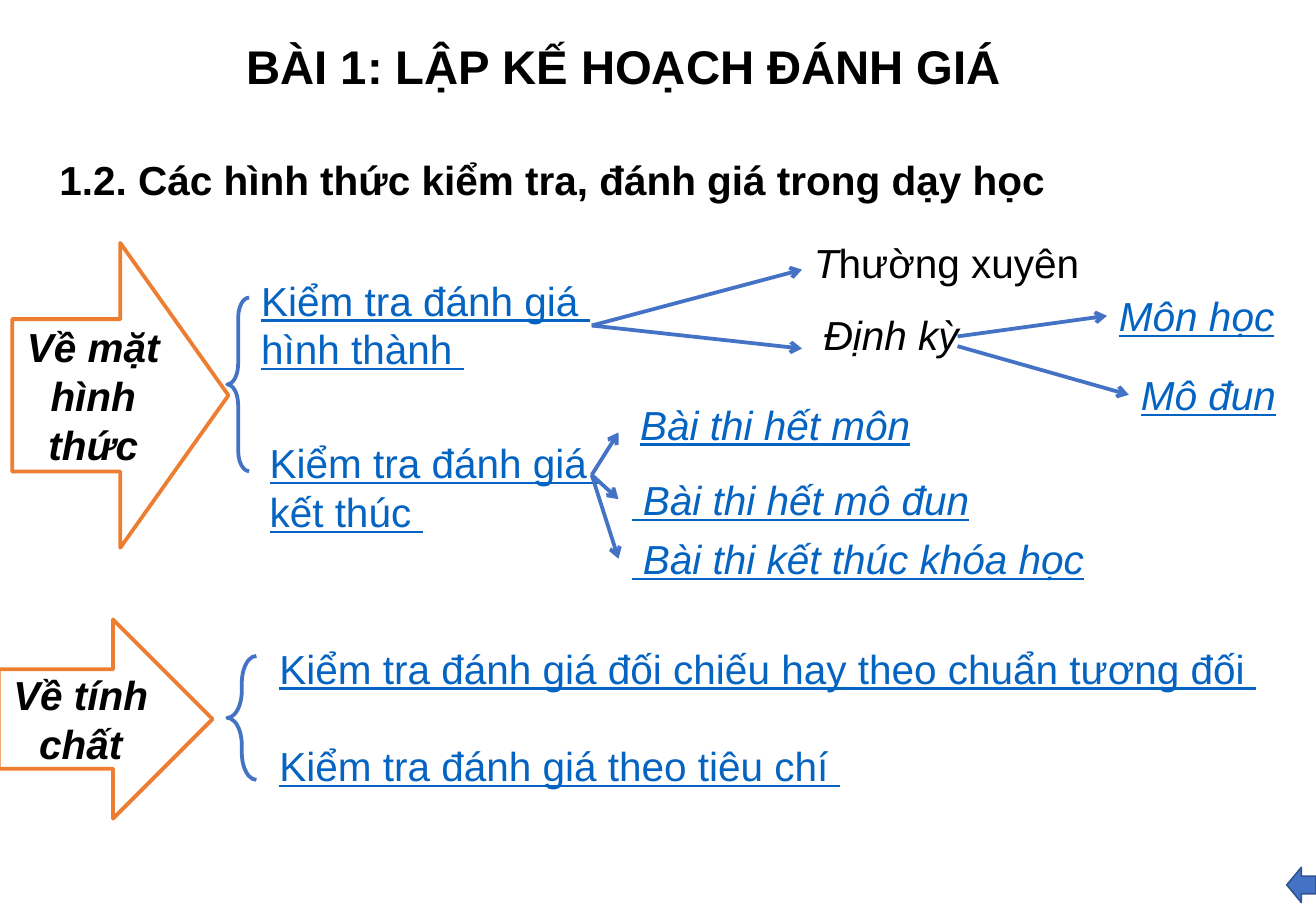
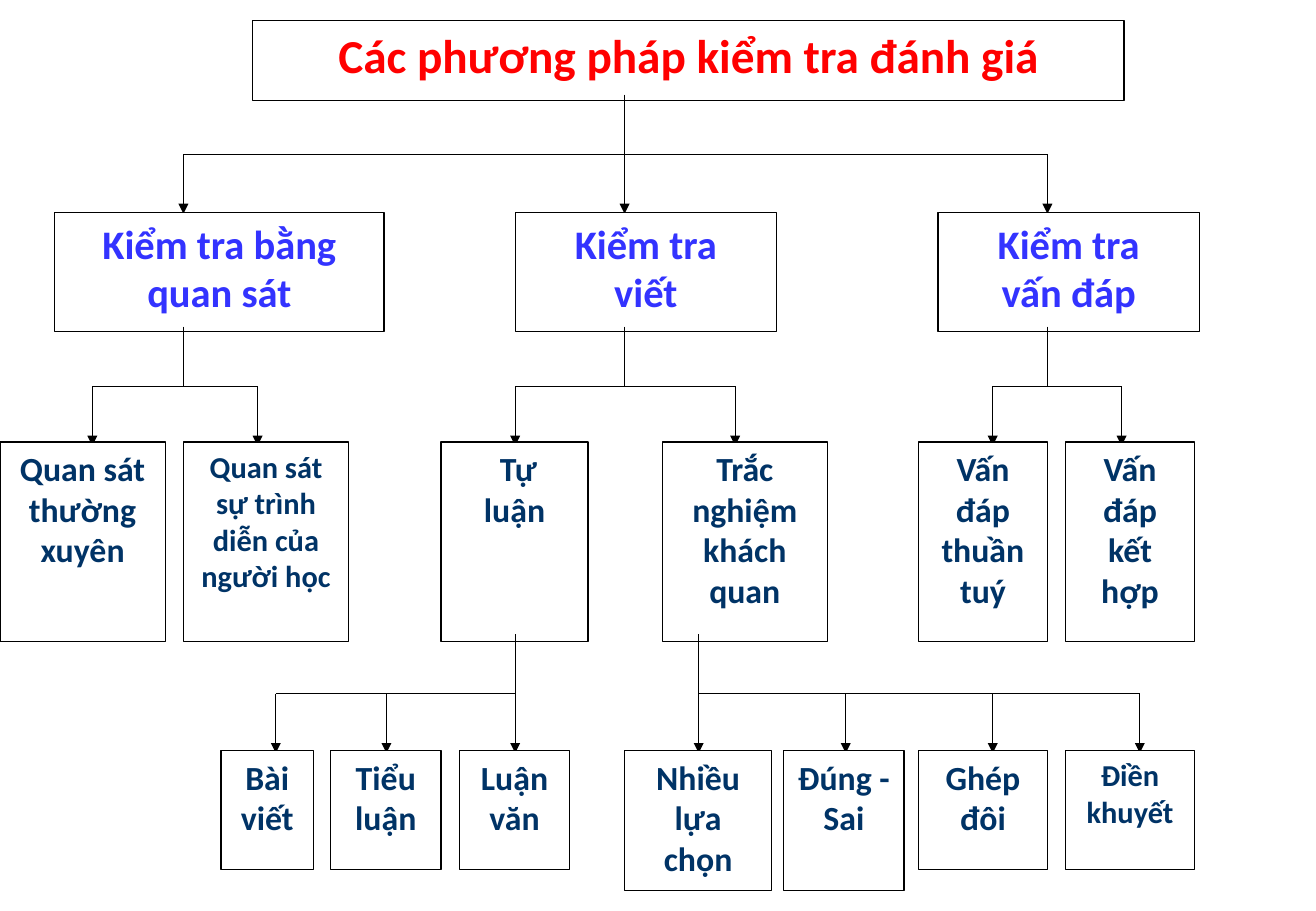
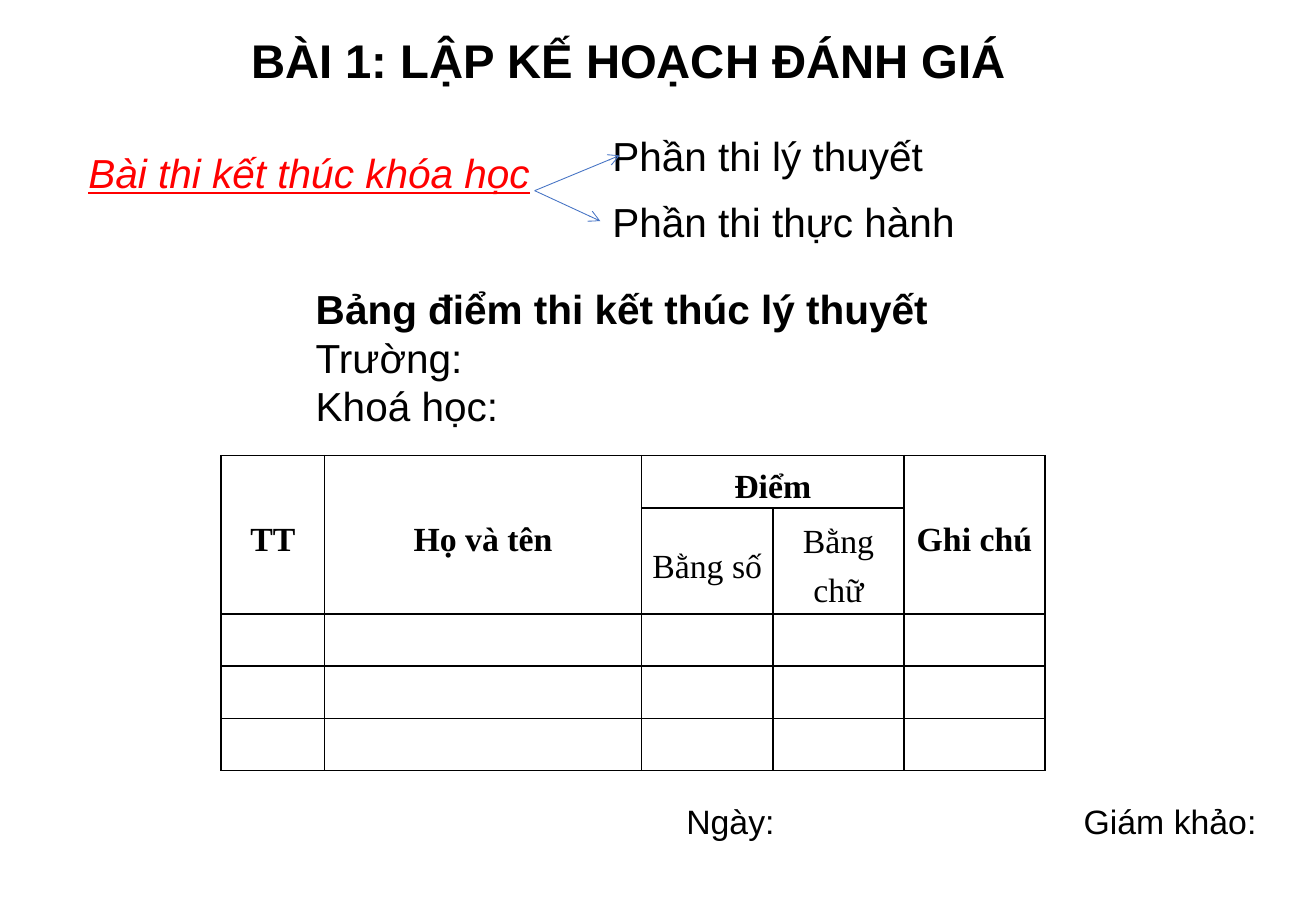
from lxml.etree import SubElement
from pptx import Presentation
from pptx.dml.color import RGBColor
from pptx.enum.shapes import MSO_CONNECTOR, MSO_SHAPE
from pptx.enum.text import MSO_ANCHOR, MSO_AUTO_SIZE, PP_ALIGN
from pptx.oxml.ns import qn
from pptx.util import Inches, Pt

COLORS = {
    "white": "FFFFFF", "black": "000000", "red": "FF0000",
    "orange": "ED7D31", "blue": "4472C4", "edge": "325491",
    "link": "0563C1", "violet": "3333FF", "navy": "003366",
}
TITLE = "BÀI 1: LẬP KẾ HOẠCH ĐÁNH GIÁ"

# Slide 1: text, place, style letters, colour
HEADING = "1.2. Các hình thức kiểm tra, đánh giá trong dạy học"
ASPECTS = [
    ("Về mặt hình thức", (0.1, 2, 1.78, 2.51)),
    ("Về tính chất", (-0.01, 5.1, 1.76, 1.64)),
]
BRACES = [(1.87, 2.45, 0.18, 1.43), (1.87, 5.4, 0.24, 1.02)]
FORMS = [
    ("Kiểm tra đánh giá \nhình thành ", (2.05, 2.22, 3.03, 0.91), "u", "link"),
    ("Kiểm tra đánh giá \nkết thúc ", (2.12, 3.56, 2.93, 0.91), "u", "link"),
    ("Bài thi hết môn", (5.17, 3.24, 2.54, 0.5), "iu", "link"),
    ("Định kỳ", (6.68, 2.5, 1.33, 0.5), "i", "black"),
    ("Môn học", (9.11, 2.35, 1.49, 0.5), "iu", "link"),
    ("Mô đun", (9.29, 3, 1.33, 0.5), "iu", "link"),
    (" Bài thi hết mô đun", (5.1, 3.86, 3.1, 0.5), "iu", "link"),
    (" Bài thi kết thúc khóa học", (5.1, 4.35, 4.06, 0.5), "iu", "link"),
]
REGULAR = [[("T", "i"), ("hường xuyên", "")]]
NATURES = ("Kiểm tra đánh giá đối chiếu hay theo chuẩn tương đối \n"
           "Kiểm tra đánh giá theo tiêu chí ")
FORM_ARROWS = [
    ((4.87, 2.68), (6.6, 2.22)), ((4.87, 2.68), (6.6, 2.87)),
    ((7.88, 2.77), (9.11, 2.6)), ((7.88, 2.85), (9.29, 3.25)),
    ((4.87, 3.91), (5.09, 3.56)), ((4.87, 3.91), (5.09, 4.11)),
    ((4.87, 3.91), (5.09, 4.6)),
]

# Slide 2: each level has boxes (text, left, width, height, size)
# and forks (trunk x, xs of the arrows) that start at fork height
HALF = 0.49
LEVELS = [
    {"top": 0.17, "color": "red", "fork": 0.78,
     "boxes": [("Các phương pháp kiểm tra đánh giá", 2.08, 7.17, 0.66, 28)],
     "forks": [(5.14, (1.51, 5.14, 8.62))]},
    {"top": 1.75, "color": "violet", "fork": 2.69,
     "boxes": [("Kiểm tra bằng quan sát", 0.45, 2.71, 0.98, 24),
               ("Kiểm tra\nviết", 4.24, 2.15, 0.98, 24),
               ("Kiểm tra\nvấn đáp", 7.72, 2.15, 0.98, 24)],
     "forks": [(1.51, (0.76, 2.12)), (5.14, (4.24, 6.05)),
               (8.62, (8.17, 9.23))]},
    {"top": 3.64, "color": "navy", "fork": 5.22,
     "boxes": [("Quan sát thường xuyên", 0, 1.36, 1.64, 20),
               ("Quan sát sự trình diễn của người học", 1.51, 1.36, 1.64, 18),
               (" Tự\nluận", 3.63, 1.21, 1.64, 20),
               ("Trắc nghiệm khách quan", 5.45, 1.36, 1.64, 20),
               ("Vấn đáp\nthuần tuý", 7.56, 1.06, 1.64, 20),
               ("Vấn đáp kết hợp", 8.77, 1.06, 1.64, 20)],
     "forks": [(4.24, (2.27, 3.18, 4.24)), (5.75, (5.75, 6.96, 8.17, 9.38))]},
    {"top": 6.18, "color": "navy", "fork": None,
     "boxes": [("Bài viết", 1.82, 0.76, 0.98, 20),
               ("Tiểu luận", 2.72, 0.91, 0.98, 20),
               ("Luận văn", 3.78, 0.91, 0.98, 20),
               ("Nhiều lựa chọn", 5.14, 1.21, 1.15, 20),
               ("Đúng - Sai", 6.45, 0.99, 1.15, 20),
               ("Ghép đôi", 7.56, 1.06, 0.98, 20),
               ("Điền khuyết", 8.77, 1.06, 0.98, 18)],
     "forks": []},
]

# Slide 3
EXAM = "Bài thi kết thúc khóa học"
PARTS = [("Phần thi lý thuyết", (4.94, 1.03, 2.88, 0.5)),
         ("Phần thi thực hành", (4.94, 1.57, 3.05, 0.5))]
PART_ARROWS = [((4.4, 1.57), (5.1, 1.28)), ((4.4, 1.57), (4.94, 1.82))]
SHEET = [[("Bảng điểm thi kết thúc lý thuyết", "b")],
         [("Trường:", "")], [("Khoá học:", "")]]
COLS = [0.85, 2.61, 1.08, 1.08, 1.16]
ROWS = [0.43, 0.87, 0.43, 0.43, 0.43]
MERGES = [((0, 0), (1, 0)), ((0, 1), (1, 1)), ((0, 2), (0, 3)), ((0, 4), (1, 4))]
CELLS = {(0, 0): ("TT", "b"), (0, 1): ("Họ và tên", "b"),
         (0, 2): ("Điểm", "b"), (0, 4): ("Ghi chú", "b"),
         (1, 2): ("Bằng số", ""), (1, 3): ("Bằng chữ", "")}
SIGNS = [("Ngày:", (5.55, 6.54, 1, 0.44)), ("Giám khảo:", (8.82, 6.54, 1.7, 0.44))]


def rgb(name):
    return RGBColor.from_string(COLORS[name])


def inch(place):
    return [Inches(v) for v in place]


def write(frame, text, size=24, style="", color="black", font="Arial",
          align=PP_ALIGN.LEFT, space=None):
    """Text is a string with line ends, or lists of (words, style) runs."""
    if isinstance(text, str):
        text = [[(line, style)] for line in text.split("\n")]
    for i, runs in enumerate(text):
        para = frame.add_paragraph() if i else frame.paragraphs[0]
        para.alignment = align
        if space:
            para.line_spacing = space
        for words, marks in runs:
            run = para.add_run()
            run.text = words
            face = run.font
            face.name, face.size = font, Pt(size)
            face.color.rgb = rgb(color)
            face.bold, face.italic = "b" in marks, "i" in marks
            face.underline = "u" in marks


def label(slide, text, place, wrap=False, **look):
    frame = slide.shapes.add_textbox(*inch(place)).text_frame
    frame.word_wrap = wrap
    frame.auto_size = MSO_AUTO_SIZE.SHAPE_TO_FIT_TEXT
    write(frame, text, **look)


def title(slide, left, top):
    label(slide, TITLE, (left, top, 6.48, 0.57), size=28, style="b")


def figure(slide, kind, place, fill, line, width):
    shape = slide.shapes.add_shape(kind, *inch(place))
    shape.shadow.inherit = False
    if fill:
        shape.fill.solid()
        shape.fill.fore_color.rgb = rgb(fill)
    else:
        shape.fill.background()
    shape.line.color.rgb = rgb(line)
    shape.line.width = Pt(width)
    return shape


def link(slide, start, end, color="black", width=0.75, head=None):
    line = slide.shapes.add_connector(
        MSO_CONNECTOR.STRAIGHT, *inch(start), *inch(end))
    line.line.color.rgb = rgb(color)
    line.line.width = Pt(width)
    props = line.element.spPr
    if head:
        SubElement(props.find(qn("a:ln")), qn("a:tailEnd"), type=head)
    SubElement(props, qn("a:effectLst"))


def fork(slide, trunk, top, drops):
    bus, tip = top + HALF, top + 2 * HALF
    straight = trunk in drops
    link(slide, (trunk, top), (trunk, tip if straight else bus),
         head="triangle" if straight else None)
    link(slide, (min(drops), bus), (max(drops), bus))
    for x in drops:
        if x != trunk:
            link(slide, (x, bus), (x, tip), head="triangle")


def border(cell):
    props = cell._tc.get_or_add_tcPr()
    for side in ("lnL", "lnR", "lnT", "lnB"):
        line = SubElement(props, qn("a:" + side), w=str(Pt(1)))
        fill = SubElement(line, qn("a:solidFill"))
        SubElement(fill, qn("a:srgbClr"), val=COLORS["black"])


def forms(slide):
    label(slide, HEADING, (0.39, 1.03, 9.84, 0.63), wrap=True, style="b",
          align=PP_ALIGN.JUSTIFY, space=1.5)
    title(slide, 1.93, 0.26)
    for text, place in ASPECTS:
        arrow = figure(slide, MSO_SHAPE.RIGHT_ARROW, place, "white", "orange", 2.25)
        frame = arrow.text_frame
        frame.word_wrap = True
        frame.vertical_anchor = MSO_ANCHOR.MIDDLE
        write(frame, text, style="bi", align=PP_ALIGN.CENTER)
    for place in BRACES:
        brace = figure(slide, MSO_SHAPE.LEFT_BRACE, place, None, "blue", 2.25)
        brace.adjustments[0] = 0.93
    for text, place, style, color in FORMS:
        label(slide, text, place, style=style, color=color)
    label(slide, REGULAR, (6.6, 1.91, 2.41, 0.5))
    label(slide, NATURES, (2.2, 4.85, 8.48, 2.4), wrap=True, style="u",
          color="link", space=2.0)
    for start, end in FORM_ARROWS:
        link(slide, start, end, "blue", 2.25, "arrow")
    figure(slide, MSO_SHAPE.LEFT_ARROW, (10.59, 7.14, 0.24, 0.29),
           "blue", "edge", 1)


def methods(slide):
    for level in LEVELS:
        for text, left, width, height, size in level["boxes"]:
            box = figure(slide, MSO_SHAPE.RECTANGLE,
                         (left, level["top"], width, height),
                         "white", "black", 0.75)
            frame = box.text_frame
            frame.word_wrap = True
            frame.vertical_anchor = MSO_ANCHOR.TOP
            write(frame, text, size, "b", level["color"], "Calibri",
                  PP_ALIGN.CENTER)
        for trunk, drops in level["forks"]:
            fork(slide, trunk, level["fork"], drops)


def scores(slide):
    """Draw the empty score table."""
    table = slide.shapes.add_table(
        len(ROWS), len(COLS),
        *inch((1.82, 3.75, sum(COLS), sum(ROWS)))).table
    table.first_row = table.horz_banding = False
    for col, width in zip(table.columns, COLS):
        col.width = Inches(width)
    for row, height in zip(table.rows, ROWS):
        row.height = Inches(height)
    for cell in table.iter_cells():
        border(cell)
        cell.fill.background()
        cell.vertical_anchor = MSO_ANCHOR.MIDDLE
        cell.margin_left = cell.margin_right = Inches(0.07)
        cell.margin_top = cell.margin_bottom = 0
    for first, last in MERGES:
        table.cell(*first).merge(table.cell(*last))
    for spot, (text, style) in CELLS.items():
        write(table.cell(*spot).text_frame, text, 20, style,
              font="Times New Roman", align=PP_ALIGN.CENTER, space=1.3)


def exam(slide):
    title(slide, 1.97, 0.21)
    for text, place in PARTS:
        label(slide, text, place)
    label(slide, SHEET, (2.5, 2.29, 5.42, 1.31), wrap=True)
    scores(slide)
    for start, end in PART_ARROWS:
        link(slide, start, end, "blue", 0.5, "arrow")
    for text, place in SIGNS:
        label(slide, text, place, size=20)
    label(slide, EXAM, (0.63, 1.17, 3.87, 0.5), style="iu", color="red")


def main():
    deck = Presentation()
    deck.slide_width, deck.slide_height = Inches(10.83), Inches(7.5)
    for draw in (forms, methods, exam):
        draw(deck.slides.add_slide(deck.slide_layouts[6]))
    deck.save("out.pptx")


if __name__ == "__main__":
    main()
